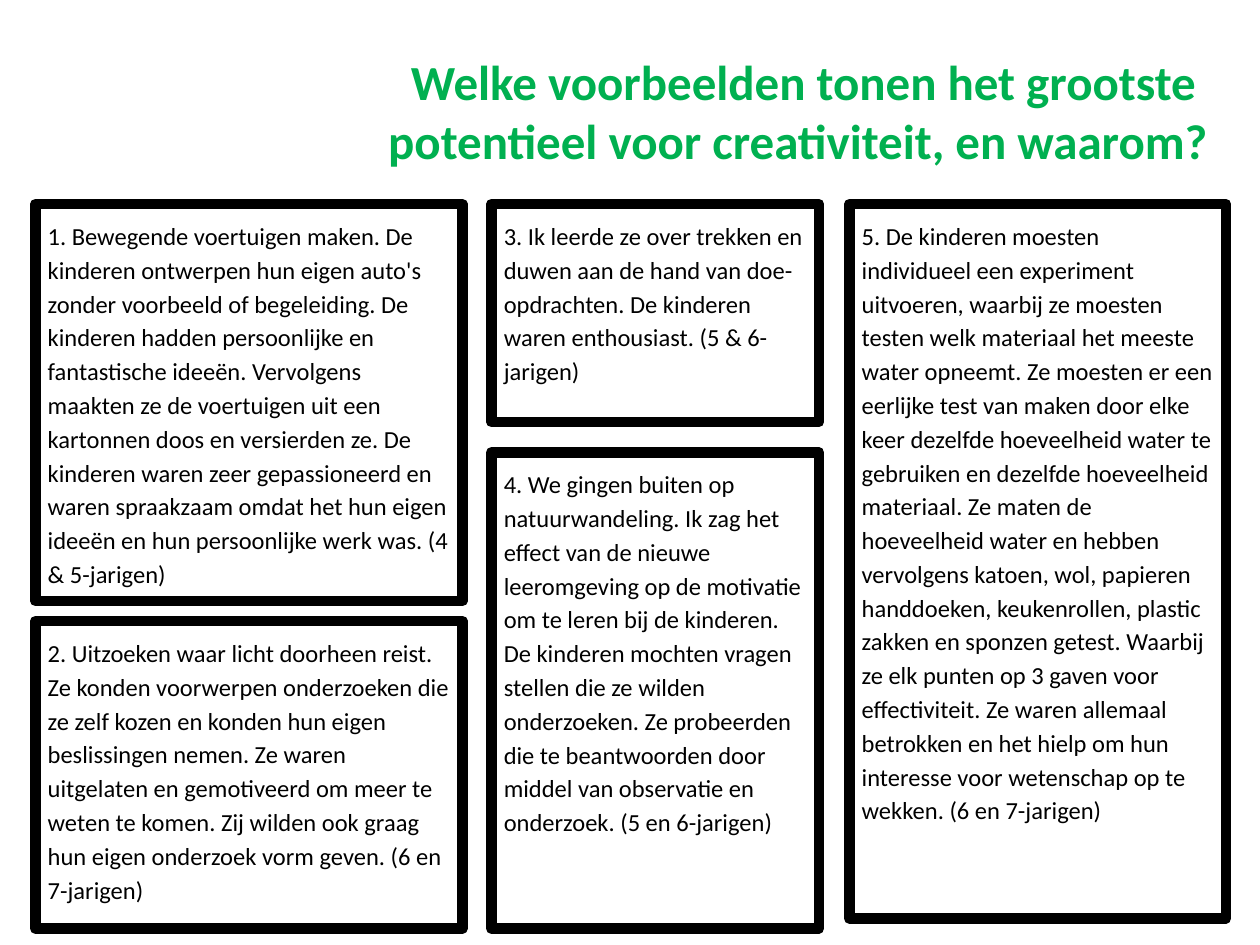
from pptx import Presentation
from pptx.dml.color import RGBColor
from pptx.enum.shapes import MSO_SHAPE
from pptx.enum.text import MSO_ANCHOR, PP_ALIGN
from pptx.util import Inches, Pt

RECT = MSO_SHAPE.RECTANGLE
TOP = MSO_ANCHOR.TOP
LEFT, CENTER = PP_ALIGN.LEFT, PP_ALIGN.CENTER
FONT = "Calibri"

TITLE = "Welke voorbeelden tonen het grootste potentieel voor creativiteit, en waarom? "

# Each column: left, width, and its cards as (top, height, text)
COLUMNS = [
    (0.28, 3.39, [
        (1.62, 3.15,
         "1. Bewegende voertuigen maken. De kinderen ontwerpen hun eigen auto's "
         "zonder voorbeeld of begeleiding. De kinderen hadden persoonlijke en "
         "fantastische ideeën. Vervolgens maakten ze de voertuigen uit een "
         "kartonnen doos en versierden ze. De kinderen waren zeer gepassioneerd "
         "en waren spraakzaam omdat het hun eigen ideeën en hun persoonlijke "
         "werk was. (4 & 5-jarigen)"),
        (4.93, 2.44,
         "2. Uitzoeken waar licht doorheen reist. Ze konden voorwerpen "
         "onderzoeken die ze zelf kozen en konden hun eigen beslissingen nemen. "
         "Ze waren uitgelaten en gemotiveerd om meer te weten te komen. Zij "
         "wilden ook graag hun eigen onderzoek vorm geven. (6 en 7-jarigen)"),
    ]),
    (3.9, 2.6, [
        (1.62, 1.73,
         "3. Ik leerde ze over trekken en duwen aan de hand van doe-opdrachten. "
         "De kinderen waren enthousiast. (5 & 6-jarigen)"),
        (3.59, 3.78,
         "4. We gingen buiten op natuurwandeling. Ik zag het effect van de "
         "nieuwe leeromgeving op de motivatie om te leren bij de kinderen. De "
         "kinderen mochten vragen stellen die ze wilden onderzoeken. Ze "
         "probeerden die te beantwoorden door middel van observatie en "
         "onderzoek. (5 en 6-jarigen)"),
    ]),
    (6.74, 2.99, [
        (1.62, 5.67,
         "5. De kinderen moesten individueel een experiment uitvoeren, waarbij "
         "ze moesten testen welk materiaal het meeste water opneemt. Ze moesten "
         "er een eerlijke test van maken door elke keer dezelfde hoeveelheid "
         "water te gebruiken en dezelfde hoeveelheid materiaal. Ze maten de "
         "hoeveelheid water en hebben vervolgens katoen, wol, papieren "
         "handdoeken, keukenrollen, plastic zakken en sponzen getest. Waarbij "
         "ze elk punten op 3 gaven voor effectiviteit. Ze waren allemaal "
         "betrokken en het hielp om hun interesse voor wetenschap op te "
         "wekken. (6 en 7-jarigen)"),
    ]),
]


def color(value):
    return RGBColor.from_string(value)


def add_run(para, text, size, tint, bold=False):
    run = para.add_run()
    run.text = text
    run.font.name = FONT
    run.font.size = Pt(size)
    run.font.bold = bold
    run.font.color.rgb = color(tint)


def set_title(slide, left, top, width, height):
    title = slide.shapes.title
    title.left, title.top = Inches(left), Inches(top)
    title.width, title.height = Inches(width), Inches(height)
    frame = title.text_frame
    frame.word_wrap = True
    frame.vertical_anchor = TOP
    para = frame.paragraphs[0]
    para.alignment = CENTER
    para.line_spacing = 1.0
    para.space_before = Pt(0)
    add_run(para, TITLE, 28, "00B050", True)


def add_card(slide, left, top, width, height, text):
    card = slide.shapes.add_shape(
        RECT, Inches(left), Inches(top), Inches(width), Inches(height))
    card.shadow.inherit = False
    card.fill.solid()
    card.fill.fore_color.rgb = color("FFFFFF")
    card.line.color.rgb = color("000000")
    card.line.width = Pt(6)
    frame = card.text_frame
    frame.word_wrap = True
    frame.vertical_anchor = TOP
    frame.margin_left = frame.margin_right = Inches(0.1)
    frame.margin_top = frame.margin_bottom = Inches(0.1)
    para = frame.paragraphs[0]
    para.alignment = LEFT
    para.line_spacing = 1.15
    para.space_after = Pt(10)
    add_run(para, text, 14, "000000")


def add_column(slide, left, width, cards):
    for top, height, text in cards:
        add_card(slide, left, top, width, height, text)


def main():
    deck = Presentation()
    deck.slide_width, deck.slide_height = Inches(10), Inches(7.5)
    slide = deck.slides.add_slide(deck.slide_layouts[5])
    set_title(slide, 2.87, 0.36, 7.01, 1.04)
    for left, width, cards in COLUMNS:
        add_column(slide, left, width, cards)
    deck.save("out.pptx")


if __name__ == "__main__":
    main()
